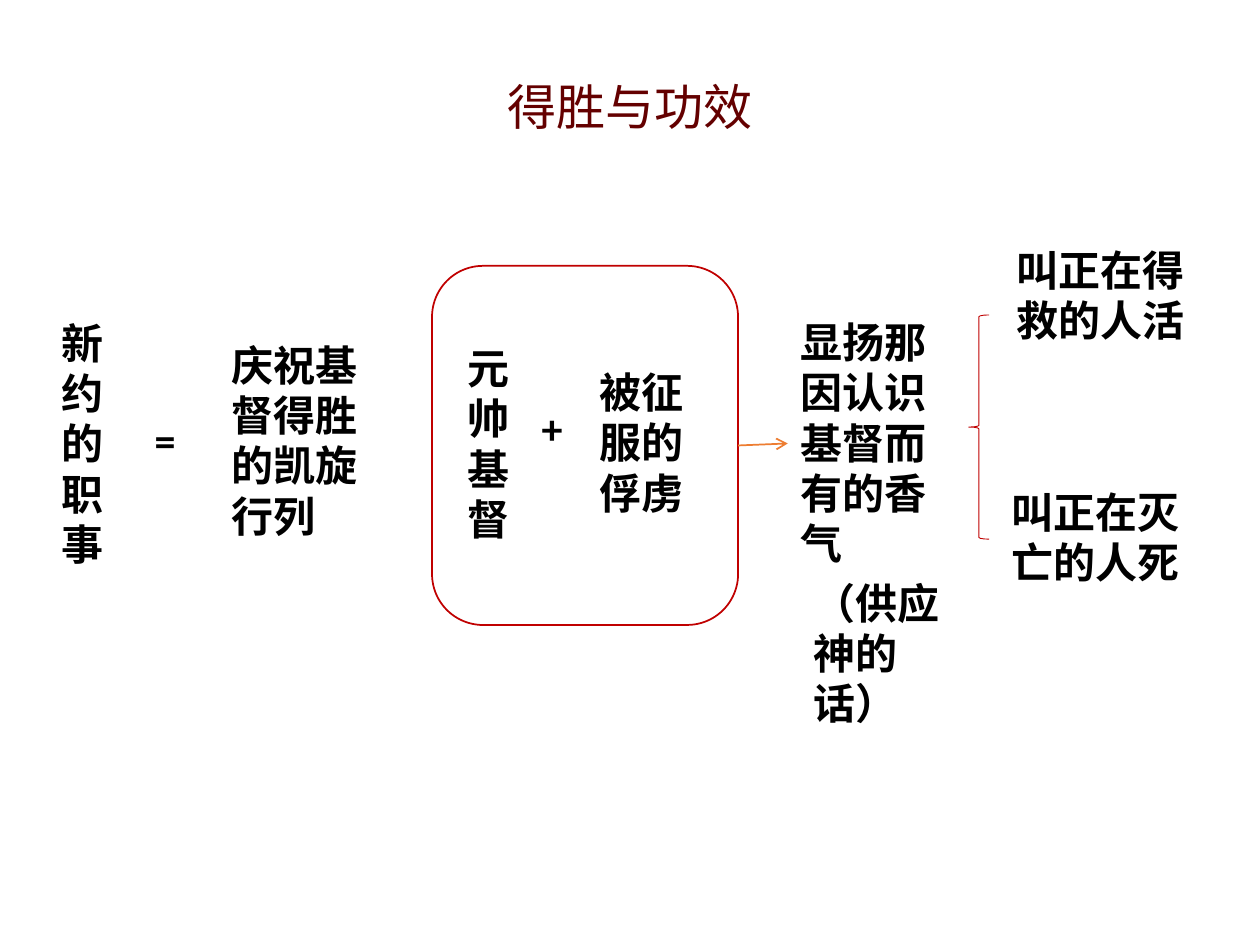
from dataclasses import dataclass

from lxml import etree
from pptx import Presentation
from pptx.dml.color import RGBColor
from pptx.enum.shapes import MSO_CONNECTOR, MSO_SHAPE
from pptx.enum.text import MSO_AUTO_SIZE
from pptx.oxml.ns import qn
from pptx.shapes.autoshape import Shape
from pptx.shapes.connector import Connector
from pptx.slide import Slide
from pptx.util import Cm, Pt

ROUNDED_RECTANGLE = MSO_SHAPE.ROUNDED_RECTANGLE
LEFT_BRACE = MSO_SHAPE.LEFT_BRACE
STRAIGHT = MSO_CONNECTOR.STRAIGHT
FIT_SHAPE = MSO_AUTO_SIZE.SHAPE_TO_FIT_TEXT

BLACK = RGBColor(0x00, 0x00, 0x00)
MAROON = RGBColor(0x64, 0x00, 0x00)
RED = RGBColor(0xC0, 0x00, 0x00)
ORANGE = RGBColor(0xED, 0x7D, 0x31)

LATIN_FONT = "Calibri"
CHINESE_FONT = "Noto Sans CJK SC"
LEFT_SIDE, RIGHT_SIDE = 1, 3


@dataclass(frozen=True)
class Label:
    text: str
    left: float
    top: float
    width: float
    height: float
    wrap: bool = True
    size: int = 24
    font: str = LATIN_FONT
    color: RGBColor = BLACK
    bold: bool = True


@dataclass(frozen=True)
class Outline:
    kind: MSO_SHAPE
    left: float
    top: float
    width: float
    height: float
    line_width: float


TITLE = Label("得胜与功效", 9.98, 1.42, 5.44, 1.45, False, 28, CHINESE_FONT, MAROON, False)
FRAGRANCE = Label("显扬那因认识基督而有的香气", 15.88, 6.25, 3.28, 5.38)
LABELS = (
    TITLE,
    Label("新约的职事", 0.99, 6.27, 1.85, 5.38),
    Label("=", 2.87, 8.23, 0.94, 1.27, wrap=False),
    Label("庆祝基督得胜的凯旋行列", 4.42, 6.71, 3.18, 4.37),
    Label("元帅基督", 9.17, 6.78, 1.27, 4.37),
    Label("+", 10.74, 7.98, 0.43, 1.27),
    Label("被征服的俘虏", 11.84, 7.26, 2.82, 3.33),
    Label("（供应神的话）", 16.15, 11.51, 3.48, 2.31),
    Label("叫正在得救的人活", 20.24, 4.8, 4.22, 2.31),
    Label("叫正在灭亡的人死", 20.14, 9.68, 4.42, 2.31),
)
TRIUMPH_FRAME = Outline(ROUNDED_RECTANGLE, 8.71, 5.36, 6.17, 7.24, 1)
OUTCOME_BRACE = Outline(LEFT_BRACE, 19.53, 6.35, 0.41, 4.52, 0.5)


def add_label(slide: Slide, label: Label) -> Shape:
    shape = slide.shapes.add_textbox(
        Cm(label.left), Cm(label.top), Cm(label.width), Cm(label.height)
    )
    frame = shape.text_frame
    frame.word_wrap = label.wrap
    frame.auto_size = FIT_SHAPE
    paragraph = frame.paragraphs[0]
    paragraph.text = label.text
    font = paragraph.font
    font.name = label.font
    font.size = Pt(label.size)
    font.bold = label.bold
    font.color.rgb = label.color
    east_asian = etree.SubElement(font._element, qn("a:ea"))
    east_asian.set("typeface", CHINESE_FONT)
    return shape


def add_outline(slide: Slide, outline: Outline) -> Shape:
    shape = slide.shapes.add_shape(
        outline.kind,
        Cm(outline.left),
        Cm(outline.top),
        Cm(outline.width),
        Cm(outline.height),
    )
    shape.shadow.inherit = False
    shape.fill.background()
    shape.line.color.rgb = RED
    shape.line.width = Pt(outline.line_width)
    return shape


def add_arrow(slide: Slide, source: Shape, target: Shape) -> Connector:
    connector = slide.shapes.add_connector(STRAIGHT, 0, 0, 0, 0)
    connector.begin_connect(source, RIGHT_SIDE)
    connector.end_connect(target, LEFT_SIDE)
    connector.line.color.rgb = ORANGE
    connector.line.width = Pt(1)
    line = connector.line._get_or_add_ln()
    etree.SubElement(line, qn("a:tailEnd")).set("type", "arrow")
    etree.SubElement(connector._element.spPr, qn("a:effectLst"))
    return connector


def main() -> None:
    presentation = Presentation()
    presentation.slide_width = Cm(25.4)
    presentation.slide_height = Cm(19.05)
    slide = presentation.slides.add_slide(presentation.slide_layouts[6])
    triumph_frame = add_outline(slide, TRIUMPH_FRAME)
    add_outline(slide, OUTCOME_BRACE)
    for label in LABELS:
        add_label(slide, label)
    fragrance = add_label(slide, FRAGRANCE)
    add_arrow(slide, triumph_frame, fragrance)
    presentation.save("out.pptx")


if __name__ == "__main__":
    main()
